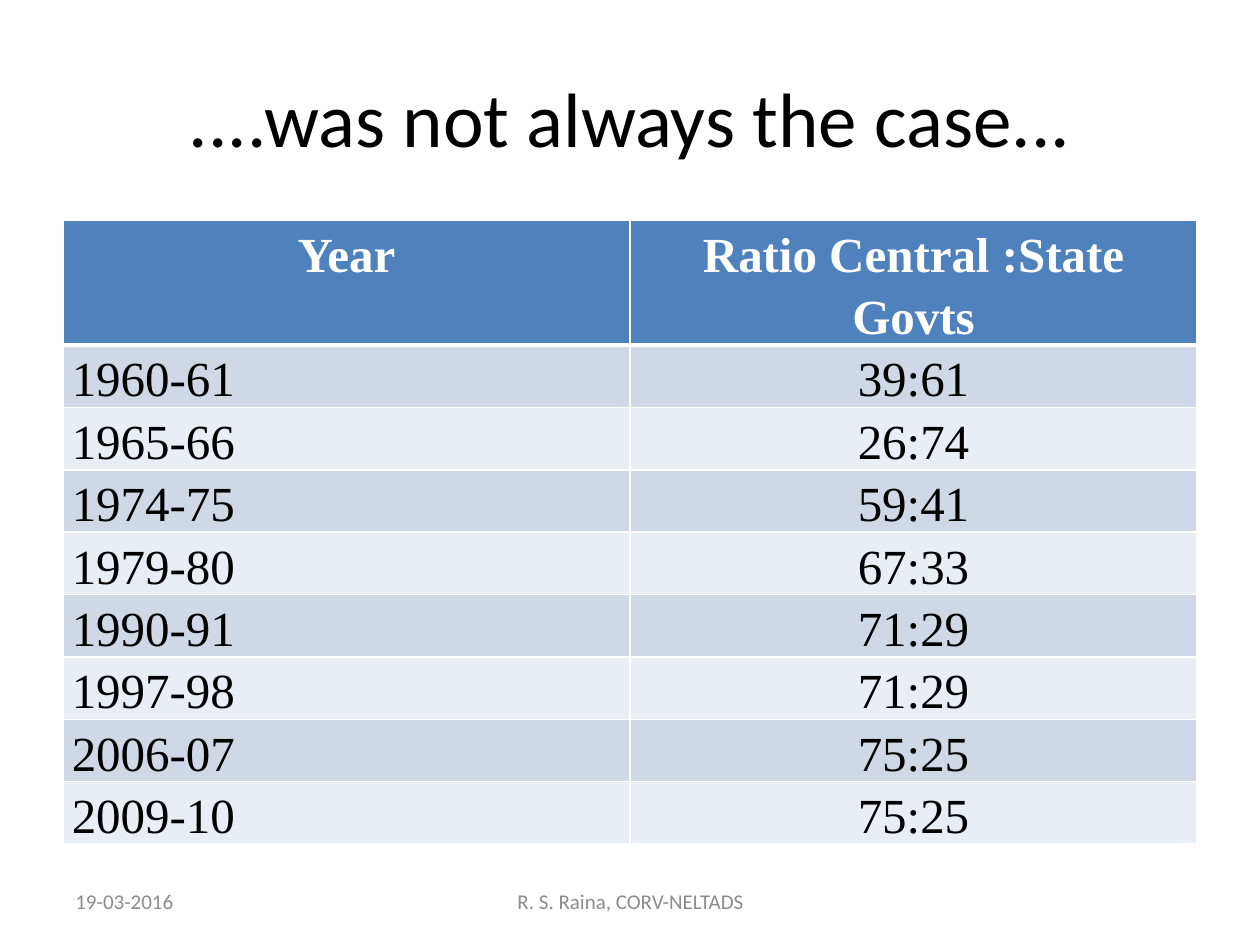
from lxml.etree import SubElement
from pptx import Presentation
from pptx.dml.color import RGBColor
from pptx.enum.text import MSO_ANCHOR as Anchor, PP_ALIGN as Align
from pptx.oxml.ns import qn
from pptx.util import Inches, Pt

COLORS = {
    "text": "000000",
    "footer": "8C8C8C",
    "white": "FFFFFF",
    "header": "4F81BD",
    "odd": "D0D8E8",
    "even": "E9EDF4",
}
RATIOS = [
    ("Year", "Ratio Central :State Govts"),
    ("1960-61", "39:61"),
    ("1965-66", "26:74"),
    ("1974-75", "59:41"),
    ("1979-80", "67:33"),
    ("1990-91", "71:29"),
    ("1997-98", "71:29"),
    ("2006-07", "75:25"),
    ("2009-10", "75:25"),
]


def write(frame, text, size, color, font="Calibri", bold=False,
          align=Align.LEFT, anchor=Anchor.MIDDLE, spacing=None):
    frame.word_wrap = True
    frame.vertical_anchor = anchor
    paragraph = frame.paragraphs[0]
    paragraph.alignment = align
    paragraph.line_spacing = spacing
    run = paragraph.add_run()
    run.text = text
    run.font.size = Pt(size)
    run.font.name = font
    run.font.bold = bold
    run.font.color.rgb = RGBColor.from_string(COLORS[color])


def add_border(cell, side, width):
    line = SubElement(cell._tc.get_or_add_tcPr(), qn(f"a:ln{side}"), w=str(Pt(width)))
    fill = SubElement(line, qn("a:solidFill"))
    SubElement(fill, qn("a:srgbClr"), val=COLORS["white"])


prs = Presentation()
prs.slide_width, prs.slide_height = Inches(10), Inches(7.5)
slide = prs.slides.add_slide(prs.slide_layouts[5])

title = slide.shapes.title
title.left, title.top = Inches(0.5), Inches(0.3)
title.width, title.height = Inches(9), Inches(1.25)
write(title.text_frame, "....was not always the case...", 44, "text", align=Align.CENTER)

row_height = Inches(0.41)
table = slide.shapes.add_table(len(RATIOS), 2, Inches(0.5), Inches(1.75),
                               Inches(9), row_height * len(RATIOS)).table
for r, row in enumerate(RATIOS):
    table.rows[r].height = row_height
    is_header = r == 0
    band = "header" if is_header else "odd" if r % 2 else "even"
    for c, text in enumerate(row):
        cell = table.cell(r, c)
        cell.margin_left = cell.margin_right = Inches(0.07)
        cell.margin_top = cell.margin_bottom = 0
        top_anchored = is_header or (c == 1 and r >= 5)
        cell.vertical_anchor = Anchor.TOP if top_anchored else Anchor.BOTTOM
        for side in "LRTB":
            under_header = (r, side) in ((0, "B"), (1, "T"))
            add_border(cell, side, 3 if under_header else 1)
        cell.fill.solid()
        cell.fill.fore_color.rgb = RGBColor.from_string(COLORS[band])
        write(cell.text_frame, text, 28, "white" if is_header else "text",
              font="Times New Roman", bold=is_header, spacing=1.15,
              align=Align.CENTER if is_header or c else Align.LEFT,
              anchor=None)

for text, left, width, align in [
    ("19-03-2016", 0.5, 2.33, Align.LEFT),
    ("R. S. Raina, CORV-NELTADS", 3.42, 3.17, Align.CENTER),
]:
    footer = slide.shapes.add_textbox(Inches(left), Inches(6.95), Inches(width), Inches(0.4))
    write(footer.text_frame, text, 12, "footer", align=align)

prs.save("out.pptx")
